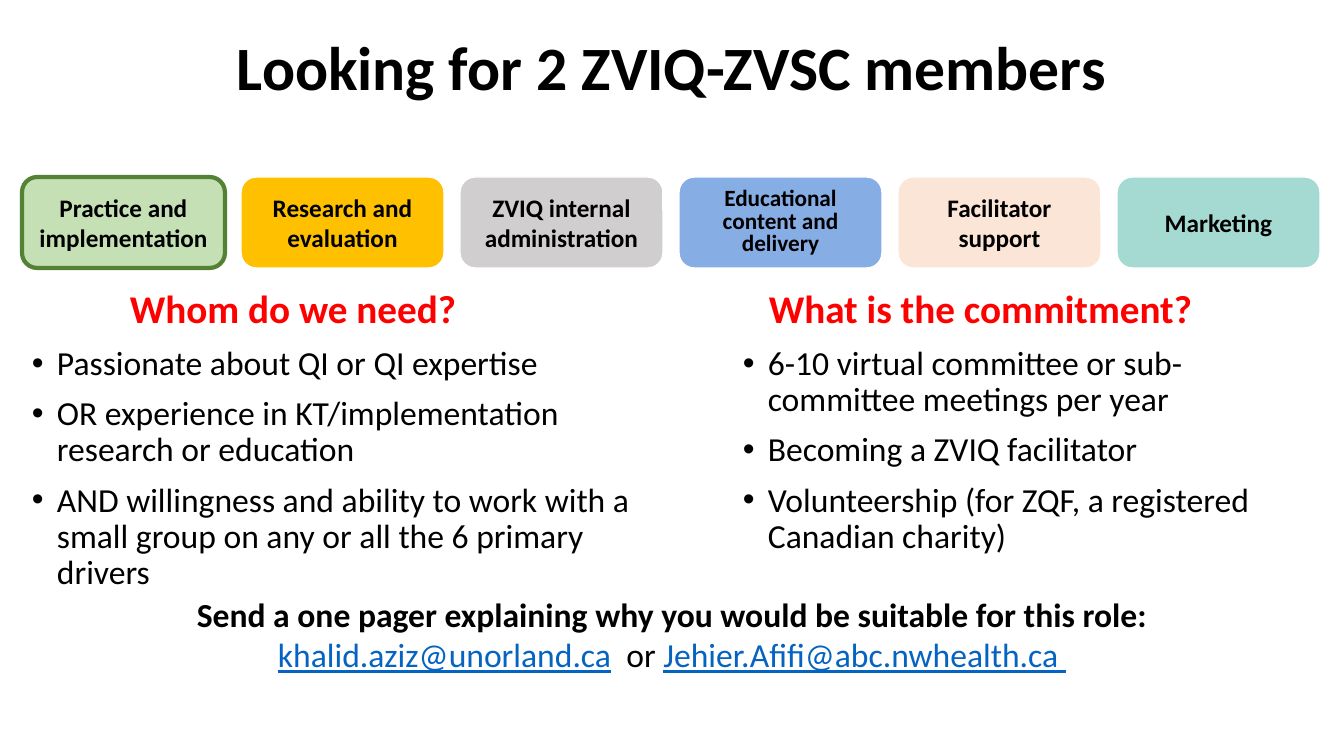
from pptx import Presentation
from pptx.dml.color import RGBColor
from pptx.enum.shapes import MSO_SHAPE
from pptx.enum.text import MSO_ANCHOR, PP_ALIGN
from pptx.util import Emu, Pt
from lxml.etree import SubElement
from pptx.oxml.ns import qn

PX = 914400 / 100.8


def px(*values):
    return [Emu(round(v * PX)) for v in values]


def add_text(p, text, size=24, color="000000", bold=False, underline=False,
             align=None, spacing=None, before=None, indent=0, bullet=False):
    r = p.add_run()
    r.text = text
    r.font.name = "Calibri"
    r.font.size = Pt(size)
    r.font.bold = bold
    r.font.underline = underline
    r.font.color.rgb = RGBColor.from_string(color)
    if align is not None:
        p.alignment = align
    if spacing:
        p.line_spacing = spacing
    if before:
        p.space_before = Pt(before)
    if indent:
        pPr = p._p.get_or_add_pPr()
        pPr.set("marL", str(px(indent)[0]))
        pPr.set("indent", str(px(-indent)[0] if bullet else 0))
        if bullet:
            SubElement(pPr, qn("a:buFont")).set("typeface", "Arial")
            SubElement(pPr, qn("a:buChar")).set("char", "•")


prs = Presentation()
prs.slide_width, prs.slide_height = px(1344, 756)
s = prs.slides.add_slide(prs.slide_layouts[6])

# Title
tf = s.shapes.add_textbox(*px(51, 12, 1242, 117)).text_frame
tf.word_wrap = True
tf.vertical_anchor = MSO_ANCHOR.MIDDLE
add_text(tf.paragraphs[0], "Looking for 2 ZVIQ-ZVSC members", size=44,
         bold=True, align=PP_ALIGN.CENTER, spacing=0.9)

# Row of six primary drivers: label, fill, line, line width, size, spacing
drivers = [
    ("Practice and implementation", "C5E0B4", "548235", 3, 18, None),
    ("Research and evaluation", "FFC000", "FFFFFF", 1, 18, None),
    ("ZVIQ internal administration", "D0CECE", "FFFFFF", 1, 18, None),
    ("Educational content and delivery", "87ADE5", "FFFFFF", 1, 16.6, 0.8),
    ("Facilitator support", "FBE5D6", "FFFFFF", 1, 18, None),
    ("Marketing", "A5DAD3", "FFFFFF", 1, 18, None),
]
for i, (label, fill, line, width, size, spacing) in enumerate(drivers):
    sp = s.shapes.add_shape(MSO_SHAPE.ROUNDED_RECTANGLE,
                            *px(22 + 219 * i, 177, 203, 91))
    sp.shadow.inherit = False
    sp.fill.solid()
    sp.fill.fore_color.rgb = RGBColor.from_string(fill)
    sp.line.color.rgb = RGBColor.from_string(line)
    sp.line.width = Pt(width)
    tf = sp.text_frame
    tf.word_wrap = True
    tf.vertical_anchor = MSO_ANCHOR.MIDDLE
    add_text(tf.paragraphs[0], label, size=size, bold=True,
             align=PP_ALIGN.CENTER, spacing=spacing)

# Two columns: left, width, heading, heading indent, bullets
columns = [
    (22, 640, "Whom do we need?", 98, [
        "Passionate about QI or QI expertise",
        "OR experience in KT/implementation research or education",
        "AND willingness and ability to work with a small group "
        "on any or all the 6 primary drivers"]),
    (733, 532, "What is the commitment?", 26, [
        "6-10 virtual committee or sub-committee meetings per year",
        "Becoming a ZVIQ facilitator",
        "Volunteership (for ZQF, a registered Canadian charity)"]),
]
for left, width, heading, indent, bullets in columns:
    tf = s.shapes.add_textbox(*px(left, 285, width, 350)).text_frame
    tf.word_wrap = True
    add_text(tf.paragraphs[0], heading, size=28, color="FF0000", bold=True,
             spacing=0.9, before=10, indent=indent)
    for text in bullets:
        add_text(tf.add_paragraph(), text, spacing=0.9, before=10,
                 indent=25, bullet=True)

# How to apply
tf = s.shapes.add_textbox(*px(51, 589, 1242, 92)).text_frame
tf.word_wrap = True
p = tf.paragraphs[0]
add_text(p, "Send a one pager explaining why you would be suitable for this role: ",
         bold=True, align=PP_ALIGN.CENTER)
add_text(p, "khalid.aziz@unorland.ca", color="0563C1", underline=True)
add_text(p, "  or ")
add_text(p, "Jehier.Afifi@abc.nwhealth.ca ", color="0563C1", underline=True)

prs.save("out.pptx")
